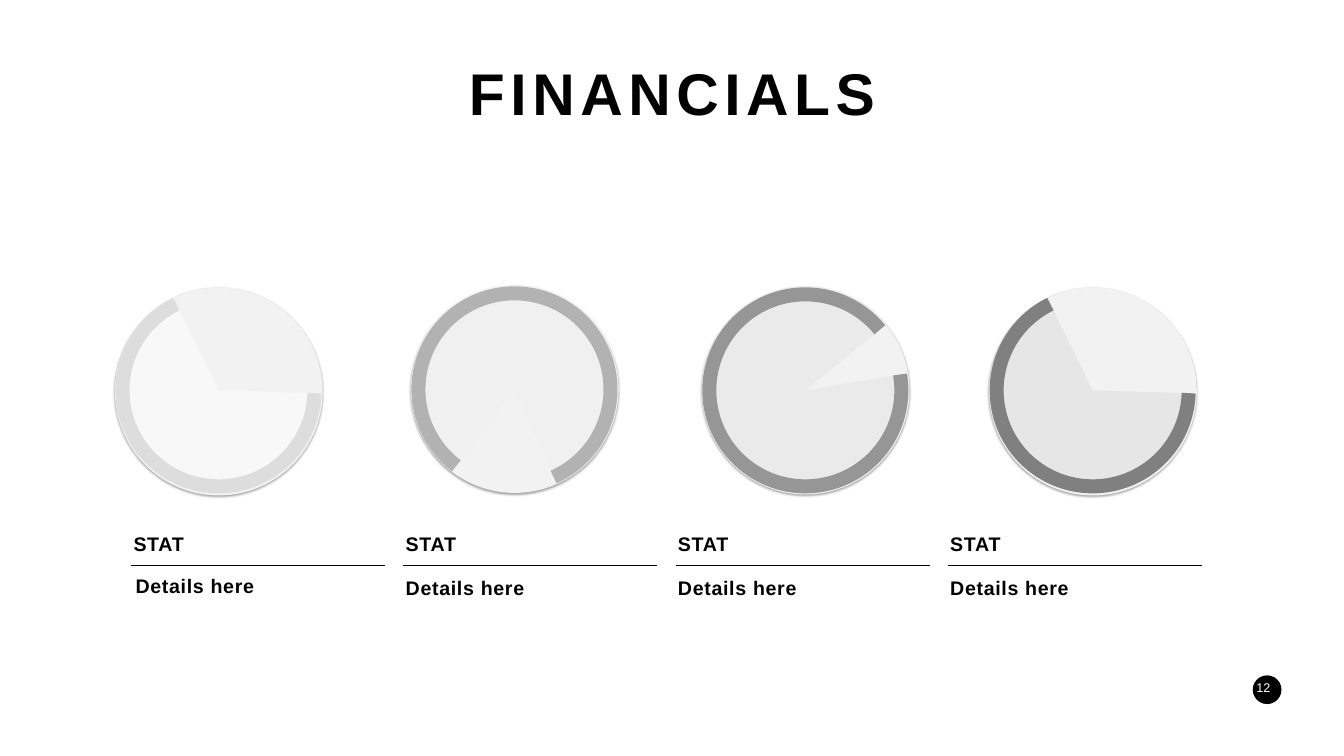
from dataclasses import dataclass

from lxml.etree import SubElement
from pptx import Presentation
from pptx.dml.color import RGBColor
from pptx.enum.shapes import MSO_CONNECTOR, MSO_SHAPE
from pptx.enum.text import MSO_ANCHOR, PP_ALIGN
from pptx.oxml.ns import qn
from pptx.shapes.autoshape import Shape
from pptx.slide import Slide
from pptx.util import Inches, Pt


@dataclass(frozen=True)
class Theme:
    font: str = "Arial"
    ink: str = "000000"
    paper: str = "FFFFFF"
    face: str = "F2F2F2"
    title_size: int = 84
    body_size: int = 28
    number_size: int = 18
    ring_width: int = 20
    rule_width: float = 0.75


@dataclass(frozen=True)
class Dial:
    left: float
    face_top: float
    ring_top: float
    start: float  # degrees, clockwise from three o'clock
    end: float
    fill: str
    ring: str


@dataclass(frozen=True)
class Label:
    text: str
    left: float
    top: float
    width: float
    height: float
    size: int
    spacing: int = 0  # points between letters
    bold: bool = True
    color: str = Theme.ink
    align: PP_ALIGN = PP_ALIGN.LEFT
    anchor: MSO_ANCHOR = MSO_ANCHOR.TOP
    wrap: bool = True


THEME = Theme()
FACE_SIZE, RING_SIZE, RING_INSET = 4.12, 3.81, 0.15
COLUMN_LEFT, COLUMN_PITCH, COLUMN_WIDTH = 2.55, 5.4, 5.09
RULE_TOP, RULE_INSET, RULE_LENGTH = 11.21, 0.05, 5.04

DIALS = [
    Dial(2.28, 5.71, 5.84, 1.67, 243.87, "F8F8F8", "DDDDDD"),
    Dial(8.15, 5.66, 5.82, 127.26, 65.97, "F0F0F0", "B2B2B2"),
    Dial(13.92, 5.69, 5.84, 350.52, 320.85, "EAEAEA", "969696"),
    Dial(19.62, 5.71, 5.84, 1.67, 243.87, "E6E6E6", "808080"),
]


def add_round(s: Slide, kind: MSO_SHAPE, left: float, top: float,
              size: float, fill: str) -> Shape:
    sp = s.shapes.add_shape(kind, Inches(left), Inches(top), Inches(size), Inches(size))
    sp.shadow.inherit = False
    sp.fill.solid()
    sp.fill.fore_color.rgb = RGBColor.from_string(fill)
    sp.line.fill.background()
    return sp


def add_drop_shadow(sp: Shape) -> None:
    effects = sp.element.spPr.find(qn("a:effectLst"))
    shadow = SubElement(effects, qn("a:outerShdw"), blurRad=str(Pt(3.1)),
                        dist=str(Pt(1.8)), dir="5400000", rotWithShape="0")
    color = SubElement(shadow, qn("a:srgbClr"), val=THEME.ink)
    SubElement(color, qn("a:alpha"), val="35000")


def add_dial(s: Slide, dial: Dial) -> None:
    face = add_round(s, MSO_SHAPE.OVAL, dial.left, dial.face_top, FACE_SIZE, THEME.face)
    add_drop_shadow(face)
    ring = add_round(s, MSO_SHAPE.ARC, dial.left + RING_INSET, dial.ring_top,
                     RING_SIZE, dial.fill)
    # Arc angles are stored in 60000ths of a degree, adjustments in 100000ths
    ring.adjustments[0] = dial.start * 0.6
    ring.adjustments[1] = dial.end * 0.6
    ring.line.color.rgb = RGBColor.from_string(dial.ring)
    ring.line.width = Pt(THEME.ring_width)


def add_label(s: Slide, label: Label) -> None:
    sp = s.shapes.add_textbox(Inches(label.left), Inches(label.top),
                              Inches(label.width), Inches(label.height))
    tf = sp.text_frame
    tf.text = label.text
    tf.word_wrap = label.wrap
    tf.vertical_anchor = label.anchor
    p = tf.paragraphs[0]
    p.alignment = label.align
    r = p.runs[0]
    r.font.name = THEME.font
    r.font.size = Pt(label.size)
    r.font.bold = label.bold
    r.font.color.rgb = RGBColor.from_string(label.color)
    if label.spacing:
        r.font._element.set("spc", str(label.spacing * 100))


def add_rule(s: Slide, left: float) -> None:
    rule = s.shapes.add_connector(MSO_CONNECTOR.STRAIGHT, Inches(left), Inches(RULE_TOP),
                                  Inches(left + RULE_LENGTH), Inches(RULE_TOP))
    rule.line.color.rgb = RGBColor.from_string(THEME.ink)
    rule.line.width = Pt(THEME.rule_width)
    SubElement(rule._element.spPr, qn("a:effectLst"))


def add_stat(s: Slide, column: int) -> None:
    left = COLUMN_LEFT + column * COLUMN_PITCH
    add_label(s, Label("STAT", left, 10.5, COLUMN_WIDTH, 0.57, THEME.body_size, 1,
                       anchor=MSO_ANCHOR.MIDDLE))
    add_rule(s, left + RULE_INSET)
    if column == 0:  # the first details box is taller and set slightly higher
        details = Label("Details here", 2.59, 11.34, 4.62, 1.3, THEME.body_size, 1)
    else:
        details = Label("Details here", left, 11.38, COLUMN_WIDTH, 0.57,
                        THEME.body_size, 1, anchor=MSO_ANCHOR.MIDDLE)
    add_label(s, details)


def main() -> None:
    prs = Presentation()
    prs.slide_width, prs.slide_height = Inches(26.66), Inches(15)
    s = prs.slides.add_slide(prs.slide_layouts[6])

    # Page number
    add_round(s, MSO_SHAPE.OVAL, 24.85, 13.4, 0.57, THEME.ink)
    add_label(s, Label("12", 24.62, 13.45, 0.88, 0.5, THEME.number_size, bold=False,
                       color=THEME.paper, align=PP_ALIGN.CENTER))

    # Title
    add_label(s, Label("FINANCIALS", 9.16, 1.08, 8.35, 1.51, THEME.title_size, 8,
                       align=PP_ALIGN.CENTER, wrap=False))

    # Dials and the figures under them
    for column, dial in enumerate(DIALS):
        add_dial(s, dial)
        add_stat(s, column)

    prs.save("out.pptx")


if __name__ == "__main__":
    main()
